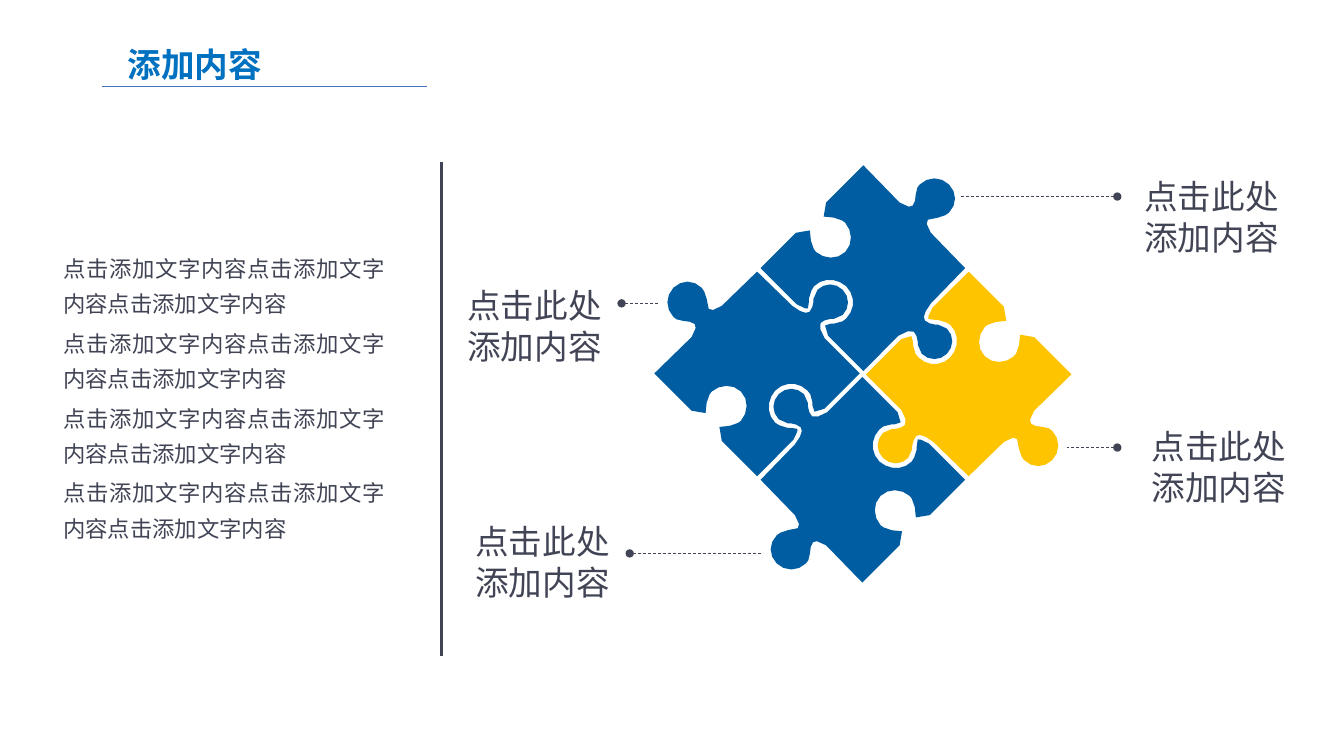
"""Build a slide with a four-piece puzzle, its labels and a column of text."""
from math import dist
from lxml import etree
from pptx import Presentation
from pptx.dml.color import RGBColor
from pptx.enum.dml import MSO_LINE as Dash
from pptx.enum.shapes import MSO_CONNECTOR as Conn
from pptx.enum.text import MSO_ANCHOR as Anchor, MSO_AUTO_SIZE as Fit, PP_ALIGN as Align
from pptx.oxml.ns import qn
from pptx.util import Pt

BLUE = RGBColor(0x00, 0x5D, 0xA2)
GOLD = RGBColor(0xFF, 0xC4, 0x00)
INK = RGBColor(0x41, 0x44, 0x55)
SKY = RGBColor(0x00, 0x70, 0xC0)
RULE = RGBColor(0x44, 0x72, 0xC4)
FONT = "Noto Sans CJK SC"

deck = Presentation()
deck.slide_width, deck.slide_height = Pt(960.5), Pt(540)
slide = deck.slides.add_slide(deck.slide_layouts[5])
shapes = slide.shapes


def write(box, text, place, size=24, color=INK, bold=False, align=Align.LEFT,
          pitch=29.3, gap=0, wrap=False):
    box.left, box.top, box.width, box.height = [Pt(n) for n in place]
    frame = box.text_frame
    frame.text = text
    frame.word_wrap = wrap
    frame.auto_size = Fit.NONE
    frame.vertical_anchor = Anchor.TOP
    for i, para in enumerate(frame.paragraphs):
        para.alignment = align
        para.line_spacing = Pt(pitch)
        para.space_before = Pt(gap if i else 0)
        for run in para.runs:
            font = run.font
            font.name, font.size, font.bold = FONT, Pt(size), bold
            font.color.rgb = color
            east = etree.SubElement(font._element, qn("a:ea"))
            east.set("typeface", FONT)


def draw(x1, y1, x2, y2, color=INK, width=0.5, dot=False):
    line = shapes.add_connector(Conn.STRAIGHT, Pt(x1), Pt(y1), Pt(x2), Pt(y2))
    line.line.color.rgb = color
    line.line.width = Pt(width)
    if dot:
        line.line.dash_style = Dash.DASH
        head = etree.SubElement(line.line._get_or_add_ln(), qn("a:headEnd"))
        head.set("type", "oval")
    etree.SubElement(line._element.spPr, qn("a:effectLst"))


write(shapes.title, "添加内容", (83.5, 27.5, 111.6, 36), color=SKY, bold=True,
      align=Align.CENTER)
draw(72.7, 61.9, 305.3, 61.9, color=RULE)
draw(315.4, 468.7, 315.4, 115.9, width=1.75)

UNIT = 0.72
HUB = (856.5, 371)
START = (942, 183)
EDGE = [
    (950, 191, 950, 203, 942, 211), (941, 212, 937, 215, 931, 216),
    (928, 216, 923, 216, 921, 218), (919, 220, 919, 223, 924, 231),
    (958, 266), (924, 301),
    (917, 310, 916, 315, 918, 318), (920, 321, 925, 321, 928, 322),
    (931, 322), (937, 322, 940, 325, 940, 326),
    (947, 333, 947, 344, 940, 351), (933, 358, 922, 358, 915, 351),
    (914, 351, 911, 348, 911, 342), (911, 339),
    (910, 335, 910, 331, 907, 329), (904, 327, 899, 329, 892, 333),
    (857, 368), (822, 333),
    (817, 325, 818, 323, 819, 323), (820, 322, 823, 322, 825, 321),
    (828, 321), (835, 321, 839, 317, 840, 316),
    (849, 307, 849, 293, 840, 284), (831, 276, 817, 275, 808, 284),
    (807, 285, 804, 290, 803, 296), (803, 299),
    (803, 302, 803, 305, 802, 306), (801, 306, 799, 307, 791, 302),
    (755, 266), (790, 231),
    (807, 221, 805, 232, 805, 239), (806, 246, 810, 250, 810, 250),
    (818, 257, 831, 258, 839, 250), (847, 242, 846, 229, 839, 221),
    (839, 221, 835, 217, 828, 216), (821, 216, 810, 218, 820, 201),
    (857, 164), (893, 201),
    (901, 206, 905, 206, 906, 204), (909, 202, 908, 197, 909, 193),
    (909, 187, 912, 184, 913, 183), (921, 175, 934, 175, 942, 183),
]
STRIDE = 7

ring = [START]
for part in EDGE:
    if len(part) == 2:
        ring.append(part)
        continue
    a, (b, c, d) = ring[-1], (part[:2], part[2:4], part[4:])
    steps = max(1, round(dist(a, d) / STRIDE))
    for k in range(1, steps + 1):
        t = k / steps
        s = 1 - t
        ring.append(tuple(s**3 * a[i] + 3 * s * s * t * b[i]
                          + 3 * s * t * t * c[i] + t**3 * d[i] for i in (0, 1)))

turn = [(x - HUB[0], y - HUB[1]) for x, y in ring[:-1]]
for color in (BLUE, GOLD, BLUE, BLUE):
    dots = [(Pt((HUB[0] + x) * UNIT), Pt((HUB[1] + y) * UNIT)) for x, y in turn]
    pen = shapes.build_freeform(*dots[0])
    pen.add_line_segments(dots[1:], close=True)
    piece = pen.convert_to_shape()
    piece.shadow.inherit = False
    piece.fill.solid()
    piece.fill.fore_color.rgb = color
    piece.line.fill.background()
    turn = [(-y, x) for x, y in turn]

LABELS = [
    (326.9, 199.5, 444.2, 216.7, 470.2),
    (810.7, 121.7, 798.5, 140.4, 686.2),
    (332.6, 368, 450, 395.3, 543.6),
    (815.8, 300.3, 798.5, 319.7, 762.5),
]
for left, top, x1, y, x2 in LABELS:
    draw(x1, y, x2, y, dot=True)
    write(shapes.add_textbox(0, 0, 0, 0), "点击此处\n添加内容", (left, top, 111.6, 65.5))

note = "点击添加文字内容" * 3
write(shapes.add_textbox(0, 0, 0, 0), "\n".join([note] * 4), (38.2, 173, 244.1, 267.8),
      size=16, align=Align.JUSTIFY, pitch=25.1, gap=3.2, wrap=True)

deck.save("out.pptx")
